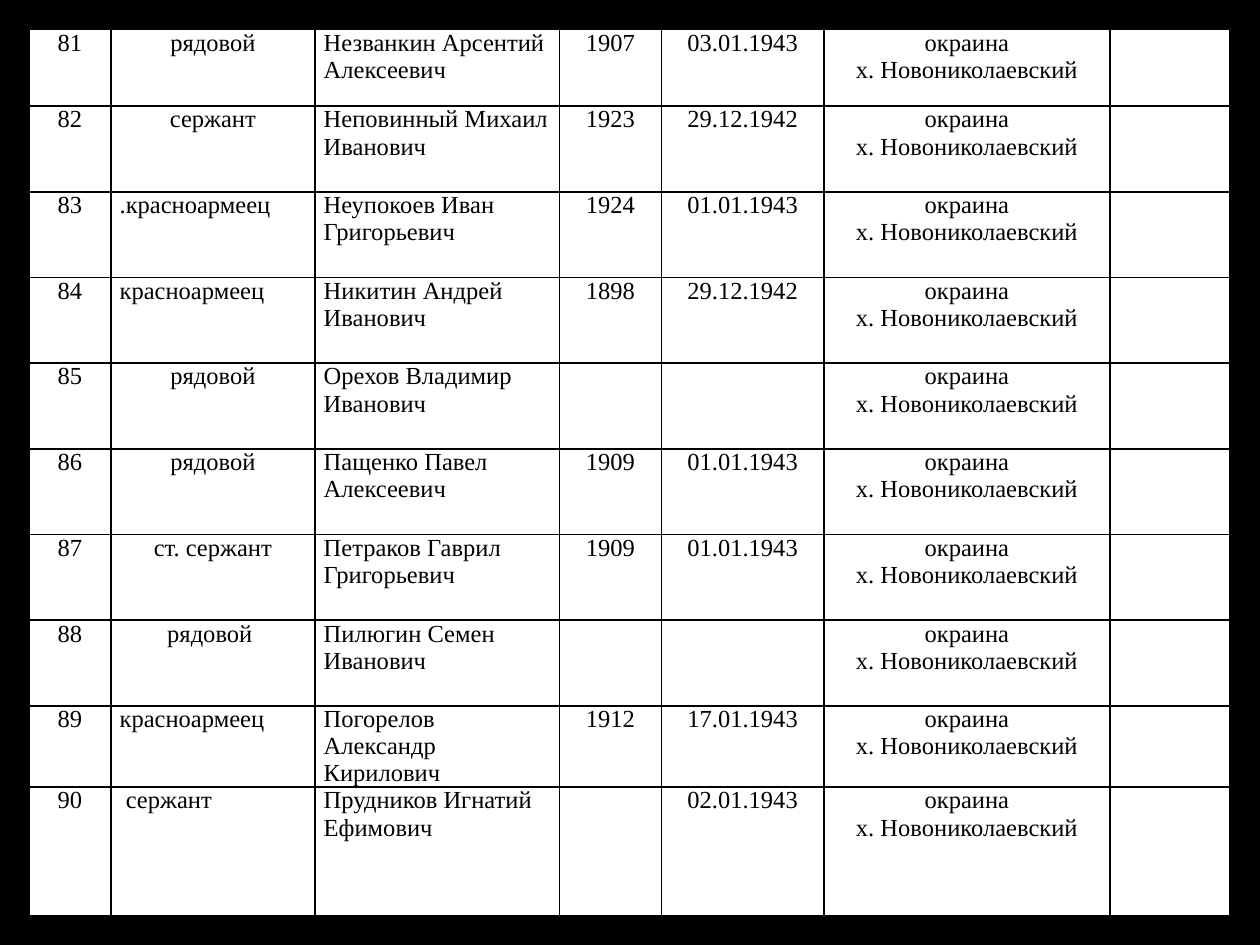
from lxml.etree import SubElement
from pptx import Presentation
from pptx.dml.color import RGBColor
from pptx.enum.text import PP_ALIGN
from pptx.oxml.ns import qn
from pptx.util import Inches, Pt

HUES = {"ink": "000000", "paper": "FFFFFF"}
COLS = [0.65, 1.62, 1.94, 0.81, 1.29, 2.27, 0.95]
ROWS = [0.61] + [0.68] * 7 + [0.63, 1.02]
PLACE = ["окраина", "х. Новониколаевский"]
FIRST = 81
NAME = 2
MEN = [
    ("рядовой", "Незванкин Арсентий Алексеевич", "1907", "03.01.1943"),
    ("сержант", "Неповинный Михаил Иванович", "1923", "29.12.1942"),
    (".красноармеец", "Неупокоев Иван Григорьевич", "1924", "01.01.1943"),
    ("красноармеец", "Никитин Андрей Иванович", "1898", "29.12.1942"),
    ("рядовой", "Орехов Владимир Иванович", "", ""),
    ("рядовой", "Пащенко Павел Алексеевич", "1909", "01.01.1943"),
    ("ст. сержант", "Петраков Гаврил Григорьевич", "1909", "01.01.1943"),
    ("рядовой ", "Пилюгин Семен Иванович", "", ""),
    ("красноармеец", "Погорелов Александр Кирилович", "1912", "17.01.1943"),
    (" сержант", "Прудников Игнатий Ефимович", "", "02.01.1943"),
]
LEFT = {".красноармеец", "красноармеец", " сержант"}


class Deck:
    font = "Times New Roman"
    size = 14

    def __init__(self):
        self.deck = Presentation()
        self.deck.slide_width = Inches(10)
        self.deck.slide_height = Inches(7.5)
        self.slide = self.deck.slides.add_slide(self.deck.slide_layouts[6])
        self.paint(self.slide.background.fill, "ink")

    def paint(self, fill, hue):
        fill.solid()
        fill.fore_color.rgb = RGBColor.from_string(HUES[hue])

    def table(self, left, top, cols, rows):
        wide, high = self.deck.slide_width, self.deck.slide_height
        frame = self.slide.shapes.add_table(
            len(rows), len(cols), int(wide * left), int(high * top),
            Inches(sum(cols)), Inches(sum(rows)))
        grid = frame.table
        grid.first_row = grid.horz_banding = False
        for col, size in zip(grid.columns, cols):
            col.width = Inches(size)
        for row, size in zip(grid.rows, rows):
            row.height = Inches(size)
        return grid

    def border(self, cell):
        props = cell._tc.get_or_add_tcPr()
        for spot, side in enumerate(("lnL", "lnR", "lnT", "lnB")):
            line = SubElement(props, qn(f"a:{side}"), w=str(Pt(1)))
            fill = SubElement(line, qn("a:solidFill"))
            SubElement(fill, qn("a:srgbClr"), val=HUES["ink"])
            props.insert(spot, line)

    def cell(self, cell, lines, align):
        self.paint(cell.fill, "paper")
        self.border(cell)
        cell.margin_left = cell.margin_right = Inches(0.07)
        cell.margin_top = cell.margin_bottom = 0
        for spot, text in enumerate(lines):
            frame = cell.text_frame
            para = frame.add_paragraph() if spot else frame.paragraphs[0]
            para.alignment = align
            if text == PLACE[0]:
                props = para._p.get_or_add_pPr()
                props.set("marL", "0")
                props.set("indent", str(Inches(-0.1)))
            self.run(para, text)

    def run(self, para, text):
        run = para.add_run()
        run.text = text
        run.font.name = self.font
        run.font.size = Pt(self.size)
        run.font.color.rgb = RGBColor.from_string(HUES["ink"])


def main():
    deck = Deck()
    grid = deck.table(0.023, 0.031, COLS, ROWS)
    for r, man in enumerate(MEN):
        texts = [str(FIRST + r), *man]
        cells = [[text] if text else [] for text in texts] + [PLACE, []]
        for c, lines in enumerate(cells):
            left = c == NAME or LEFT.intersection(lines)
            align = PP_ALIGN.LEFT if left else PP_ALIGN.CENTER
            deck.cell(grid.cell(r, c), lines, align)
    deck.deck.save("out.pptx")


if __name__ == "__main__":
    main()
